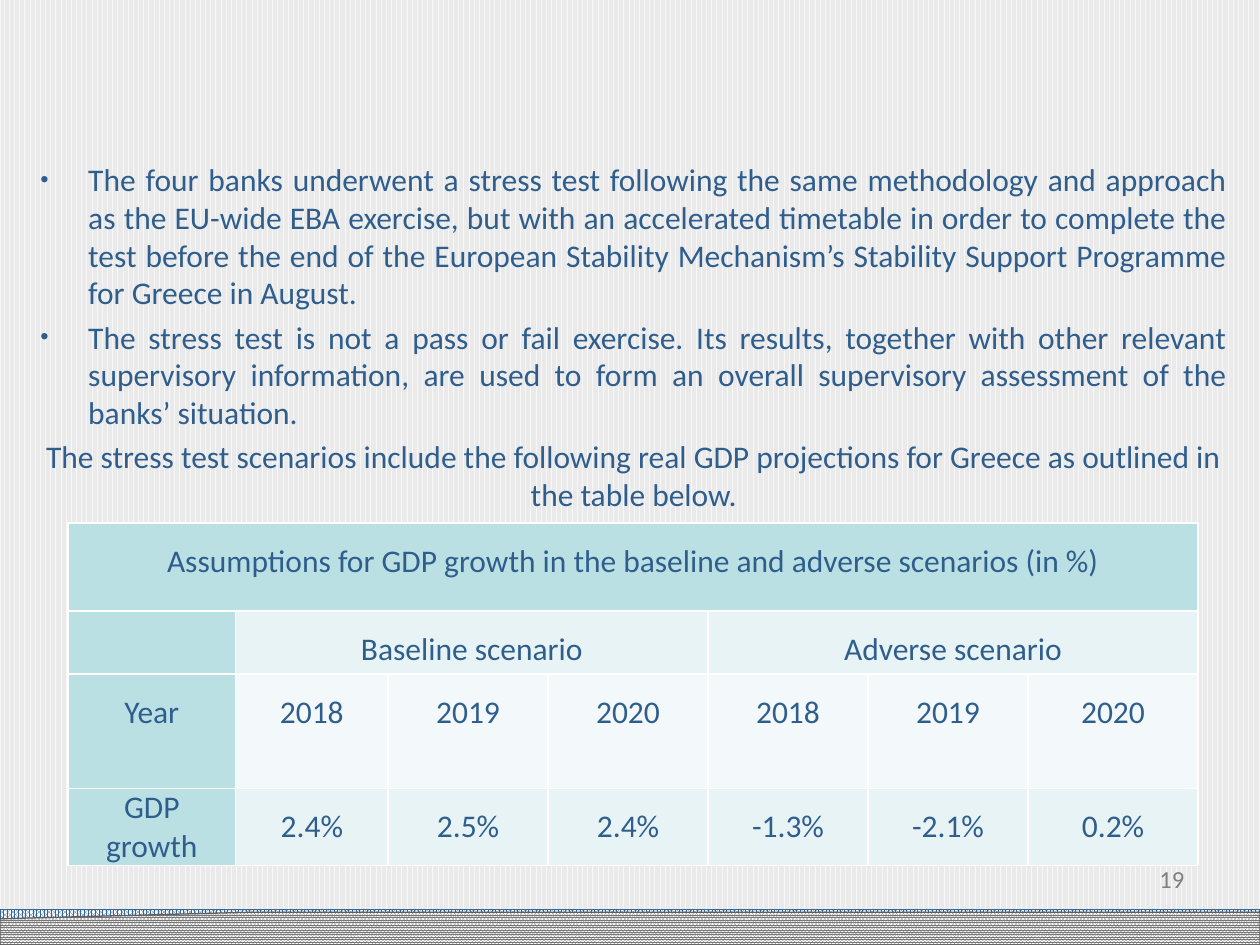
import pptx
import pptx.util
import pptx.dml.color
import pptx.enum.dml
import pptx.enum.shapes
import pptx.enum.text
import pptx.oxml
import pptx.oxml.ns
from dataclasses import dataclass
from lxml import etree

Inches = pptx.util.Inches
Pt = pptx.util.Pt
Align = pptx.enum.text.PP_ALIGN
Pattern = pptx.enum.dml.MSO_PATTERN
Preset = pptx.enum.shapes.MSO_SHAPE


@dataclass(frozen=True)
class Theme:
    face: str = "Calibri"
    text: str = "2F5E8D"
    muted: str = "808080"
    white: str = "FFFFFF"
    paper: str = "F7F7F7"
    stripe: str = "EAEAEA"
    blue: str = "336699"
    gray: str = "777777"
    edge: str = "5F5F5F"
    header: str = "BBE0E3"
    band: str = "E7F3F4"
    pale: str = "F3F9FA"
    body_size: int = 18
    number_size: int = 14


THEME = Theme()

BULLETS = [
    "The four banks underwent a stress test following the same methodology and approach "
    "as the EU-wide EBA exercise, but with an accelerated timetable in order to complete "
    "the test before the end of the European Stability Mechanism’s Stability Support "
    "Programme for Greece in August.",
    "The stress test is not a pass or fail exercise. Its results, together with other "
    "relevant supervisory information, are used to form an overall supervisory assessment "
    "of the banks’ situation.",
]
TABLE_LEAD = (
    "The stress test scenarios include the following real GDP projections for Greece "
    "as outlined in the table below."
)
GDP_ROWS = [
    ["Assumptions for GDP growth in the baseline and adverse scenarios (in %)"] + [""] * 6,
    ["", "Baseline scenario", "", "", "Adverse scenario", "", ""],
    ["Year"] + ["2018", "2019", "2020"] * 2,
    ["GDP growth", "2.4%", "2.5%", "2.4%", "-1.3%", "-2.1%", "0.2%"],
]
MERGES = [(0, 0, 6), (1, 1, 3), (1, 4, 6)]


def rgb(value):
    return pptx.dml.color.RGBColor.from_string(value)


def set_pattern(fill, pattern, fore, back):
    fill.patterned()
    fill.pattern = pattern
    fill.fore_color.rgb = rgb(fore)
    fill.back_color.rgb = rgb(back)


def set_font(para, size, color):
    para.font.name = THEME.face
    para.font.size = Pt(size)
    para.font.color.rgb = rgb(color)


def add_footer_bar(page, box, preset, pattern, color, edge):
    bar = page.shapes.add_shape(preset, *map(Inches, box))
    bar.shadow.inherit = False
    set_pattern(bar.fill, pattern, color, THEME.white)
    bar.line.color.rgb = rgb(edge)
    bar.line.width = Pt(0.75)


def set_bullet(para, char=None, indent=0):
    props = para._p.get_or_add_pPr()
    props.set("marL", str(Inches(indent)))
    props.set("indent", str(-Inches(indent)))
    if char is None:
        etree.SubElement(props, pptx.oxml.ns.qn("a:buNone"))
    else:
        etree.SubElement(props, pptx.oxml.ns.qn("a:buSzPct"), val="75000")
        etree.SubElement(props, pptx.oxml.ns.qn("a:buChar"), char=char)


def fill_body(page, box):
    body = page.placeholders[1]
    body.left, body.top, body.width, body.height = map(Inches, box)
    frame = body.text_frame
    frame.word_wrap = True
    frame.auto_size = pptx.enum.text.MSO_AUTO_SIZE.NONE
    for index, text in enumerate(BULLETS + [TABLE_LEAD]):
        para = frame.paragraphs[0] if index == 0 else frame.add_paragraph()
        para.text = text
        if text == TABLE_LEAD:
            set_bullet(para)
            para.alignment = Align.CENTER
        else:
            set_bullet(para, "•", 0.38)
            para.alignment = Align.JUSTIFY
        para.space_before = Pt(3.6 if index else 0)
        set_font(para, THEME.body_size, THEME.text)


def set_borders(cell):
    props = cell._tc.get_or_add_tcPr()
    for side in ("lnL", "lnR", "lnT", "lnB"):
        props.append(pptx.oxml.parse_xml(
            f'<a:{side} {pptx.oxml.ns.nsdecls("a")} w="{Pt(1)}"><a:solidFill>'
            f'<a:srgbClr val="{THEME.white}"/></a:solidFill></a:{side}>'
        ))


def add_gdp_table(page, box, widths, heights):
    frame = page.shapes.add_table(len(heights), len(widths), *map(Inches, box))
    table = frame.table
    table.first_row = False
    table.horz_banding = False
    for column, width in zip(table.columns, widths):
        column.width = Inches(width)
    for row, height in zip(table.rows, heights):
        row.height = Inches(height)
    row_fills = [THEME.header, THEME.band, THEME.pale, THEME.band]
    for r, texts in enumerate(GDP_ROWS):
        for c, text in enumerate(texts):
            cell = table.cell(r, c)
            set_borders(cell)
            cell.fill.solid()
            cell.fill.fore_color.rgb = rgb(THEME.header if c == 0 else row_fills[r])
            cell.margin_left = cell.margin_right = Inches(0.07)
            cell.margin_top = cell.margin_bottom = 0
            para = cell.text_frame.paragraphs[0]
            para.text = text
            para.alignment = Align.CENTER
            para.line_spacing = 1.0 if text == "GDP growth" else 1.5
            set_font(para, THEME.body_size, THEME.text)
    for r, first, last in MERGES:
        table.cell(r, first).merge(table.cell(r, last))


def add_page_number(page, box, number):
    frame = page.shapes.add_textbox(*map(Inches, box)).text_frame
    frame.word_wrap = True
    para = frame.paragraphs[0]
    para.text = number
    para.alignment = Align.CENTER
    set_font(para, THEME.number_size, THEME.muted)


def build_stress_test_page(deck):
    page = deck.slides.add_slide(deck.slide_layouts[1])
    title = page.shapes.title._element
    title.getparent().remove(title)
    set_pattern(page.background.fill, Pattern.DARK_VERTICAL, THEME.stripe, THEME.paper)
    add_footer_bar(page, (0, 7.22, 10, 0.28), Preset.RECTANGLE,
                   Pattern.PERCENT_80, THEME.blue, THEME.blue)
    add_footer_bar(page, (0, 7.24, 10, 0.26), Preset.FLOWCHART_CARD,
                   Pattern.PERCENT_90, THEME.gray, THEME.edge)
    fill_body(page, (0.22, 1.22, 9.62, 5.86))
    add_gdp_table(page, (0.54, 4.15, 8.97, 2.71),
                  [1.33, 1.21] + [1.27] * 4 + [1.35], [0.7, 0.5, 0.91, 0.6])
    add_page_number(page, (8.76, 6.81, 1.08, 0.52), "19")


def main():
    deck = pptx.Presentation()
    deck.slide_width, deck.slide_height = Inches(10), Inches(7.5)
    build_stress_test_page(deck)
    deck.save("out.pptx")


if __name__ == "__main__":
    main()
